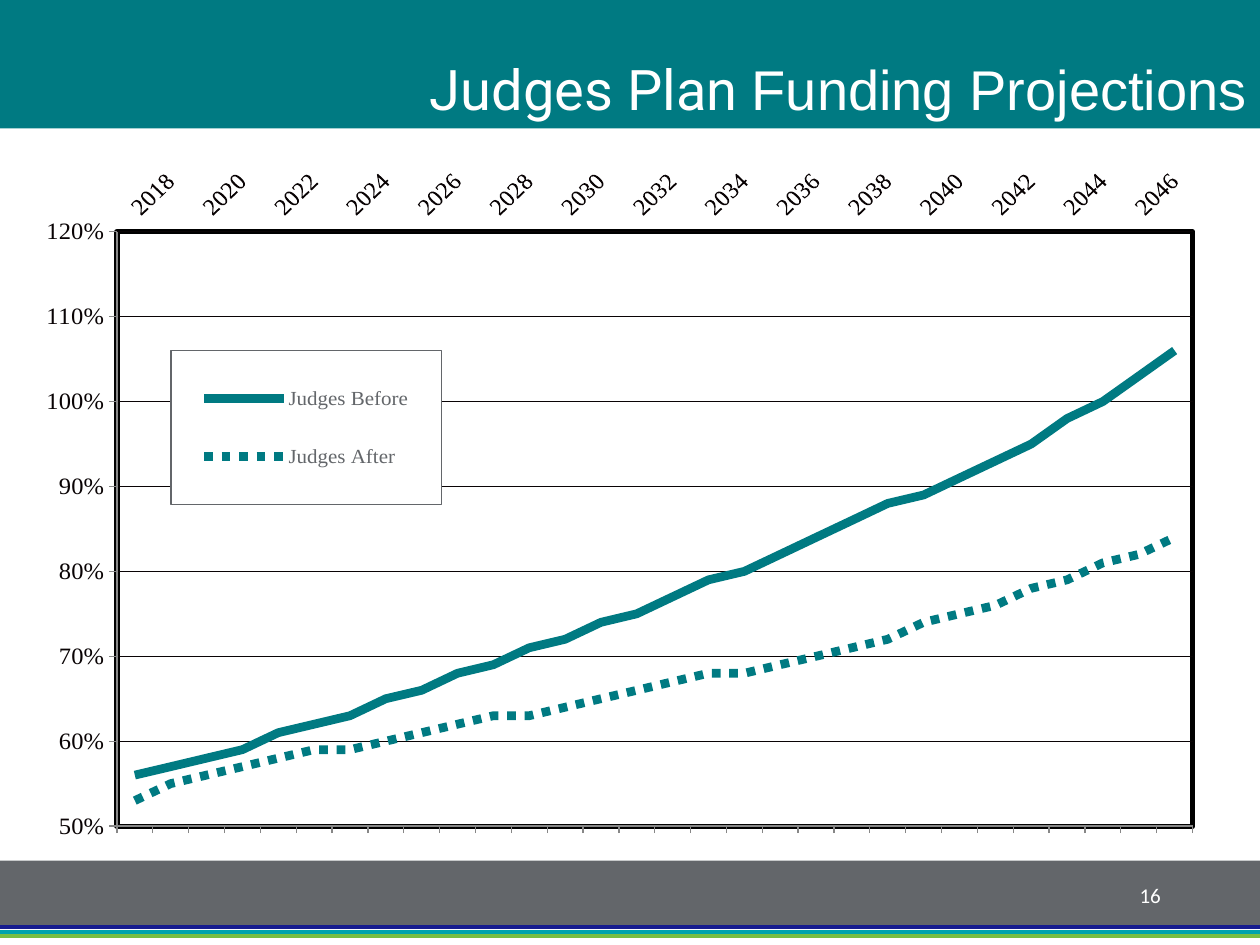
"""Build the slide with the funding projections of the Judges Plan."""
from pptx import Presentation
from pptx import util as u
from pptx.chart.data import CategoryChartData
from pptx.dml.color import RGBColor
from pptx.enum import chart as ch, dml, shapes, text
from pptx.oxml import parse_xml
from pptx.oxml.ns import nsdecls, qn

TEAL, GREY, INK, WHITE = "007A82", "63666A", "090304", "FFFFFF"


def paint(form, tone):
    """Give a fill, line or font a solid colour."""
    if hasattr(form, "solid"):
        form.solid()
        form.fore_color.rgb = RGBColor.from_string(tone)
    else:
        form.color.rgb = RGBColor.from_string(tone)


deck = Presentation()
deck.slide_width, deck.slide_height = u.Cm(25.4), u.Cm(19.05)
slide = deck.slides.add_slide(deck.slide_layouts[5])

for top, high, tone in ((17.35, 1.7, GREY), (18.69, 0.36, WHITE)):
    band = slide.shapes.add_shape(
        shapes.MSO_SHAPE.RECTANGLE, 0, u.Cm(top), deck.slide_width, u.Cm(high))
    band.shadow.inherit = False
    paint(band.fill, tone)
    band.line.fill.background()

for top, tone in ((18.69, "171C8F"), (18.8, "00A3AD"), (18.87, "78BE43")):
    stripe = slide.shapes.add_connector(
        shapes.MSO_CONNECTOR.STRAIGHT, 0, u.Cm(top), deck.slide_width, u.Cm(top))
    stripe.line.width = u.Pt(2.5)
    paint(stripe.line, tone)
    stripe._element.spPr.append(parse_xml(f"<a:effectLst {nsdecls('a')}/>"))

title = slide.shapes.title
title.left, title.top = 0, 0
title.width, title.height = deck.slide_width, u.Cm(2.59)
paint(title.fill, TEAL)
frame = title.text_frame
frame.word_wrap = True
frame.auto_size = text.MSO_AUTO_SIZE.NONE
frame.vertical_anchor = text.MSO_ANCHOR.BOTTOM
head = frame.paragraphs[0]
head.alignment = text.PP_ALIGN.RIGHT
head.line_spacing = 0.9
for words, face in (("Judges Plan ", "Roboto"), ("Funding Projections", "Arial")):
    run = head.add_run()
    run.text = words
    run.font.name, run.font.size = face, u.Pt(32)
    paint(run.font, WHITE)

before = (56, 57, 58, 59, 61, 62, 63, 65, 66, 68, 69, 71, 72, 74, 75,
          77, 79, 80, 82, 84, 86, 88, 89, 91, 93, 95, 98, 100, 103, 106)
after = (53, 55, 56, 57, 58, 59, 59, 60, 61, 62, 63, 63, 64, 65, 66,
         67, 68, 68, 69, 70, 71, 72, 74, 75, 76, 78, 79, 81, 82, 84)
data = CategoryChartData(number_format="0%")
data.categories = [str(year) for year in range(2018, 2048)]
for name, rates in (("Judges Before", before), ("Judges After", after)):
    data.add_series(name, [rate / 100 for rate in rates])
chart = slide.shapes.add_chart(
    ch.XL_CHART_TYPE.LINE, u.Cm(0.84), u.Cm(3.38), u.Cm(23.7), u.Cm(13.54), data).chart
chart.has_title = False
chart.font.name, chart.font.size = "Times New Roman", u.Pt(16)
paint(chart.font, GREY)

chart.plots[0].vary_by_categories = False
for line, dash in zip(chart.plots[0].series,
                      (dml.MSO_LINE.SOLID, dml.MSO_LINE.ROUND_DOT)):
    line.smooth = False
    line.marker.style = ch.XL_MARKER_STYLE.NONE
    line.format.line.width = u.Pt(5)
    paint(line.format.line, TEAL)
    line.format.line.dash_style = dash

years, rates = chart.category_axis, chart.value_axis
for axis in (years, rates):
    axis.major_tick_mark = ch.XL_TICK_MARK.OUTSIDE
    axis.minor_tick_mark = ch.XL_TICK_MARK.NONE
    axis.format.line.width = u.Pt(0.75)
    paint(axis.format.line, "878787")
    axis.tick_labels.font.size = u.Pt(14)
    paint(axis.tick_labels.font, INK)
years.tick_label_position = ch.XL_TICK_LABEL_POSITION.HIGH
years._element.txPr.bodyPr.set("rot", "-2700000")
last = years._element.find(qn("c:noMultiLvlLbl"))
for tag, step in (("tickLblSkip", 2), ("tickMarkSkip", 1)):
    last.addprevious(parse_xml(f'<c:{tag} {nsdecls("c")} val="{step}"/>'))
rates.minimum_scale, rates.maximum_scale, rates.major_unit = 0.5, 1.2, 0.1
rates.tick_labels.number_format = "0%"
rates.tick_labels.number_format_is_linked = False
rates.has_major_gridlines = True
rates.major_gridlines.format.line.width = u.Pt(0.75)
paint(rates.major_gridlines.format.line, INK)

chart.has_legend = True
key = chart.legend
key.position = ch.XL_LEGEND_POSITION.BOTTOM
key.include_in_layout = False
area = chart._chartSpace.chart.plotArea
for part, spot, inner, box, fill, edge, wide in (
        (area, 0, '<c:layoutTarget val="inner"/>', (0.064, 0.054, 0.915, 0.929),
         "<a:noFill/>", "000000", 3),
        (key._element, 1, "", (0.11, 0.24, 0.23, 0.24),
         f'<a:solidFill><a:srgbClr val="{WHITE}"/></a:solidFill>', GREY, 0.75)):
    for old in part.findall(qn("c:layout")):
        part.remove(old)
    modes = "".join(f'<c:{side}Mode val="edge"/>' for side in "xy")
    sizes = "".join(f'<c:{side} val="{size}"/>' for side, size in zip("xywh", box))
    part.insert(spot, parse_xml(
        f'<c:layout {nsdecls("c")}><c:manualLayout>{inner}{modes}{sizes}'
        "</c:manualLayout></c:layout>"))
    part.append(parse_xml(
        f'<c:spPr {nsdecls("c", "a")}>{fill}<a:ln w="{u.Pt(wide)}"><a:solidFill>'
        f'<a:srgbClr val="{edge}"/></a:solidFill></a:ln></c:spPr>'))
key.font.size = u.Pt(12)
key.font.name = "Times New Roman"
paint(key.font, GREY)

page = slide.shapes.add_textbox(u.Cm(17.93), u.Cm(17.53), u.Cm(5.72), u.Cm(1.02))
page.text_frame.word_wrap = True
page.text_frame.vertical_anchor = text.MSO_ANCHOR.MIDDLE
num = page.text_frame.paragraphs[0]
num.text = "16"
num.alignment = text.PP_ALIGN.RIGHT
num.font.name, num.font.size = "Calibri", u.Pt(12)
paint(num.font, WHITE)

deck.save("out.pptx")
